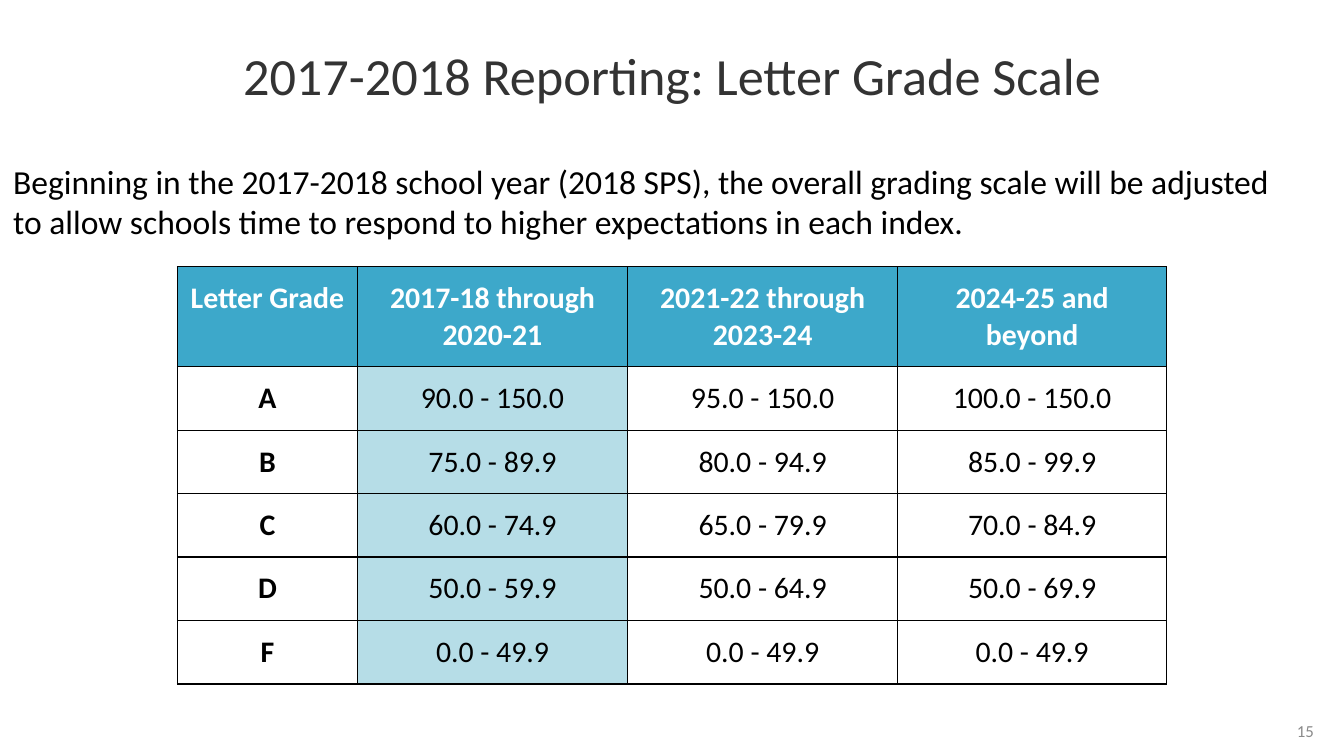
import pptx
import pptx.dml.color
import pptx.enum.text
import pptx.oxml
import pptx.oxml.ns
import pptx.util

PX = 4572  # EMU, at 200 px to the inch
ALIGN = pptx.enum.text.PP_ALIGN
ANCHOR = pptx.enum.text.MSO_ANCHOR

THEME = {
    "font": "Calibri",
    "title": {"size": 28, "color": "333333"},
    "intro": {"size": 18, "color": "000000"},
    "header": {"size": 16, "color": "FFFFFF", "bold": True},
    "grade": {"size": 16, "color": "000000", "bold": True},
    "range": {"size": 16, "color": "000000", "bold": False},
    "number": {"size": 9, "color": "8A8A8A"},
    "header_fill": "3DA8CA",
    "current_fill": "B6DDE7",
    "border": "000000",
    "border_width": 0.75,
}

COLUMN_WIDTHS = [268, 402, 402, 400]
HEADER_HEIGHT, ROW_HEIGHT = 148, 94
CURRENT_COLUMN = 1
GRADE_SCALE = [
    ["Letter Grade", "2017-18 through 2020-21", "2021-22 through 2023-24", "2024-25 and beyond"],
    ["A", "90.0 - 150.0", "95.0 - 150.0", "100.0 - 150.0"],
    ["B", "75.0 - 89.9", "80.0 - 94.9", "85.0 - 99.9"],
    ["C", "60.0 - 74.9", "65.0 - 79.9", "70.0 - 84.9"],
    ["D", "50.0 - 59.9", "50.0 - 64.9", "50.0 - 69.9"],
    ["F", "0.0 - 49.9", "0.0 - 49.9", "0.0 - 49.9"],
]


def write_text(holder, text, style, align, anchor=ANCHOR.MIDDLE, margin_x=20, margin_y=20):
    """Fill a text frame or table cell with one paragraph in the named theme style."""
    layout = {"vertical_anchor": anchor,
              "margin_left": margin_x * PX, "margin_right": margin_x * PX,
              "margin_top": margin_y * PX, "margin_bottom": margin_y * PX}
    for name, value in layout.items():
        setattr(holder, name, value)
    frame = getattr(holder, "text_frame", holder)
    frame.word_wrap = True
    para = frame.paragraphs[0]
    para.alignment = align
    span = para.add_run()
    span.text = text
    look = THEME[style]
    values = {"name": THEME["font"], "size": pptx.util.Pt(look["size"]),
              "bold": look.get("bold", False)}
    for name, value in values.items():
        setattr(span.font, name, value)
    span.font.color.rgb = pptx.dml.color.RGBColor.from_string(look["color"])


def add_borders(cell):
    width = pptx.util.Pt(THEME["border_width"])
    for side in ("lnL", "lnR", "lnT", "lnB"):
        line = pptx.oxml.parse_xml(
            f'<a:{side} {pptx.oxml.ns.nsdecls("a")} w="{width}"><a:solidFill>'
            f'<a:srgbClr val="{THEME["border"]}"/></a:solidFill></a:{side}>')
        cell._tc.get_or_add_tcPr().append(line)


deck = pptx.Presentation()
deck.slide_width, deck.slide_height = 2000 * PX, 1125 * PX
page = deck.slides.add_slide(deck.slide_layouts.get_by_name("Title Only"))

title = page.shapes.title
for name, value in {"left": 0, "top": -4, "width": 2000, "height": 230}.items():
    setattr(title, name, value * PX)
write_text(title.text_frame, "2017-2018 Reporting: Letter Grade Scale", "title", ALIGN.CENTER)

# Grade scale table
table_height = HEADER_HEIGHT + ROW_HEIGHT * (len(GRADE_SCALE) - 1)
table = page.shapes.add_table(
    len(GRADE_SCALE), len(COLUMN_WIDTHS),
    264 * PX, 397 * PX, sum(COLUMN_WIDTHS) * PX, table_height * PX).table
table.horz_banding = False
for column, width in zip(table.columns, COLUMN_WIDTHS):
    column.width = width * PX

for row_index, row in enumerate(GRADE_SCALE):
    is_header = row_index == 0
    table.rows[row_index].height = (HEADER_HEIGHT if is_header else ROW_HEIGHT) * PX
    for column_index, text in enumerate(row):
        cell = table.cell(row_index, column_index)
        add_borders(cell)
        fill = THEME["header_fill"] if is_header else THEME["current_fill"]
        if is_header or column_index == CURRENT_COLUMN:
            cell.fill.solid()
            cell.fill.fore_color.rgb = pptx.dml.color.RGBColor.from_string(fill)
        else:
            cell.fill.background()
        style = "header" if is_header else "grade" if column_index == 0 else "range"
        write_text(cell, text, style, ALIGN.CENTER, ANCHOR.TOP, margin_x=19)

intro = page.shapes.add_textbox(0, 245 * PX, 1960 * PX, 108 * PX)
write_text(
    intro.text_frame,
    "Beginning in the 2017-2018 school year (2018 SPS), the overall grading scale will be "
    "adjusted to allow schools time to respond to higher expectations in each index.",
    "intro", ALIGN.LEFT)

number = page.shapes.add_textbox(1487 * PX, 1049 * PX, 488 * PX, 76 * PX)
write_text(number.text_frame, "15", "number", ALIGN.RIGHT, margin_y=10)

deck.save("out.pptx")
